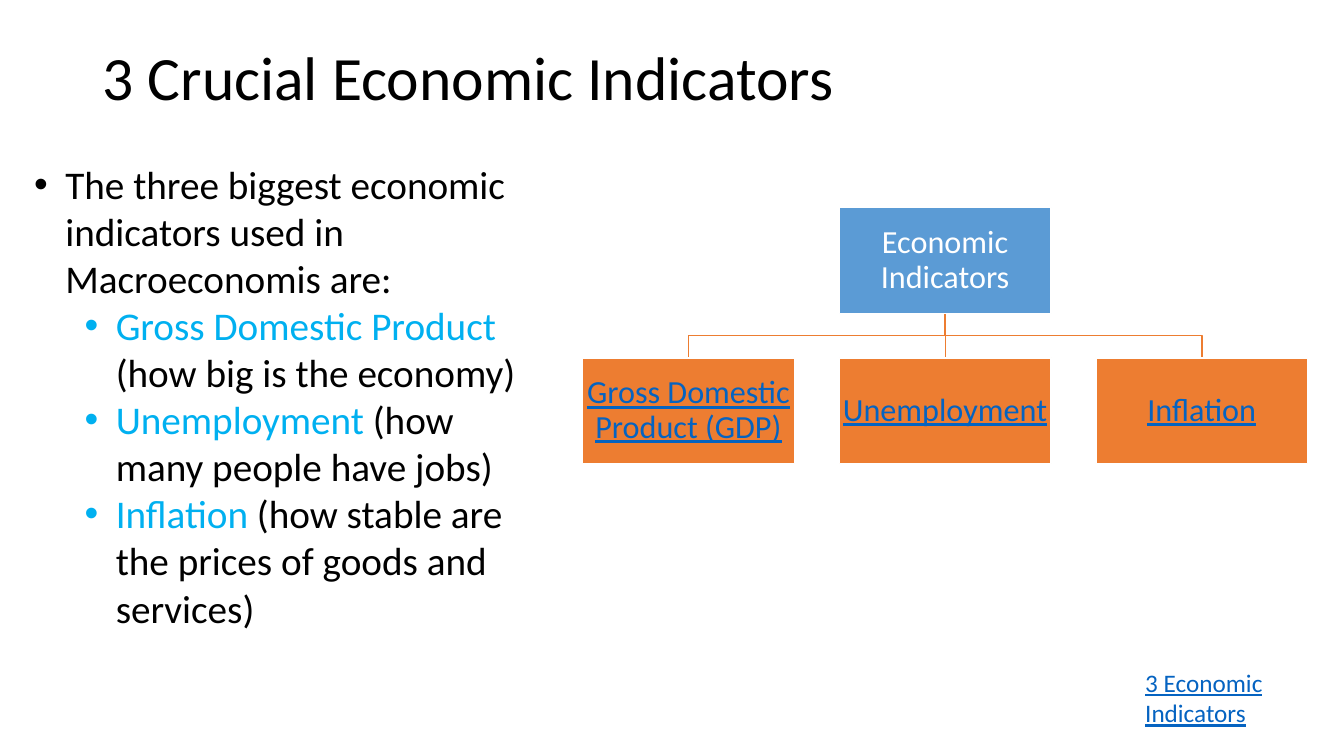
from dataclasses import dataclass

from lxml.etree import SubElement
from pptx import Presentation
from pptx.dml.color import RGBColor as RGB
from pptx.enum.shapes import MSO_CONNECTOR as CONNECTOR, MSO_SHAPE as SHAPE
from pptx.enum.text import MSO_ANCHOR as ANCHOR, PP_ALIGN as ALIGN
from pptx.oxml.ns import qn
from pptx.util import Inches, Pt


@dataclass(frozen=True)
class Theme:
    font: str = "Calibri"
    ink: str = "000000"
    paper: str = "FFFFFF"
    accent: str = "00B0F0"
    root: str = "5B9BD5"
    branch: str = "ED7D31"
    link: str = "0563C1"
    title_size: int = 44
    body_size: int = 28
    node_size: int = 23
    caption_size: int = 18
    line_width: int = 1


THEME = Theme()
WIDTH, HEIGHT = 13.33, 7.5

TITLE_BOX = (0.92, 0.4, 11.5, 0.8)
BULLETS_BOX = (0.24, 1.54, 5.3, 4.81)
CHART_BOX = (5.78, 2.06, 7.19, 2.54)
CAPTION_BOX = (11.26, 6.57, 2.31, 0.71)

INTRO = "The three biggest economic indicators used in Macroeconomis are:"
INDICATORS = [
    ("Gross Domestic Product ", "(how big is the economy)"),
    ("Unemployment", " (how many people have jobs)"),
    ("Inflation ", "(how stable are the prices of goods and services)"),
]
BRANCHES = ["Gross Domestic Product (GDP)", "Unemployment", "Inflation"]


def style(font, size, color, underline=None):
    font.name = THEME.font
    font.size = Pt(size)
    font.color.rgb = RGB.from_string(color)
    font.underline = underline


def add_text(page, box):
    frame = page.shapes.add_textbox(*map(Inches, box)).text_frame
    frame.word_wrap = True
    return frame


def add_title(page, box):
    frame = add_text(page, box)
    frame.vertical_anchor = ANCHOR.MIDDLE
    para = frame.paragraphs[0]
    para.text = "3 Crucial Economic Indicators"
    para.line_spacing = 0.9
    style(para.font, THEME.title_size, THEME.ink)


def set_bullet(para, level, indent, color):
    para.level = level
    props = para._p.get_or_add_pPr()
    props.set("marL", str(Inches(indent)))
    props.set("indent", str(Inches(-0.31)))
    SubElement(SubElement(props, qn("a:buClr")), qn("a:srgbClr"), val=color)
    SubElement(props, qn("a:buFont"), typeface="Arial")
    SubElement(props, qn("a:buChar"), char="•")


def add_bullets(page, box):
    frame = add_text(page, box)
    intro = frame.paragraphs[0]
    intro.text = INTRO
    style(intro.font, THEME.body_size, THEME.ink)
    set_bullet(intro, 0, 0.31, THEME.ink)
    for name, meaning in INDICATORS:
        para = frame.add_paragraph()
        set_bullet(para, 1, 0.81, THEME.accent)
        for text, color in ((name, THEME.accent), (meaning, THEME.ink)):
            span = para.add_run()
            span.text = text
            style(span.font, THEME.body_size, color)


def add_node(page, box, text, fill, color, underline=None):
    node = page.shapes.add_shape(SHAPE.RECTANGLE, *map(Inches, box))
    node.shadow.inherit = False
    node.fill.solid()
    node.fill.fore_color.rgb = RGB.from_string(fill)
    style_line(node.line, THEME.paper)
    frame = node.text_frame
    frame.word_wrap = True
    frame.vertical_anchor = ANCHOR.MIDDLE
    frame.margin_left = frame.margin_right = Inches(0.02)
    frame.margin_top = frame.margin_bottom = Inches(0.02)
    para = frame.paragraphs[0]
    para.text = text
    para.alignment = ALIGN.CENTER
    para.line_spacing = 0.9
    style(para.font, THEME.node_size, color, underline)


def style_line(line, color):
    line.color.rgb = RGB.from_string(color)
    line.width = Pt(THEME.line_width)


def add_link(page, start, end):
    """Joins two points: straight when one is above the other, else with two bends."""
    (x1, y1), (x2, y2) = start, end
    if x1 == x2:
        link = page.shapes.add_connector(
            CONNECTOR.STRAIGHT, *map(Inches, (x1, y1, x2, y2)))
        SubElement(link._element.spPr, qn("a:effectLst"))
    else:
        middle = (y1 + y2) / 2
        bends = [(x1, middle), (x2, middle), end]
        builder = page.shapes.build_freeform(Inches(x1), Inches(y1))
        builder.add_line_segments(
            [(Inches(x), Inches(y)) for x, y in bends], close=False)
        link = builder.convert_to_shape()
        link.shadow.inherit = False
        link.fill.background()
    style_line(link.line, THEME.branch)


def add_hierarchy(page, box):
    left, top, width, height = box
    node_width, node_height = 2.1, 1.05
    pitch = (width - node_width) / (len(BRANCHES) - 1)
    lefts = [left + pitch * column for column in range(len(BRANCHES))]
    root_left = left + (width - node_width) / 2
    branch_top = top + height - node_height
    root_foot = (root_left + node_width / 2, top + node_height)

    for branch_left in reversed(lefts):
        add_link(page, root_foot, (branch_left + node_width / 2, branch_top))
    add_node(page, (root_left, top, node_width, node_height),
             "Economic Indicators", THEME.root, THEME.paper)
    for branch_left, text in zip(lefts, BRANCHES):
        add_node(page, (branch_left, branch_top, node_width, node_height),
                 text, THEME.branch, THEME.link, True)


def add_caption(page, box):
    para = add_text(page, box).paragraphs[0]
    para.text = "3 Economic Indicators"
    style(para.font, THEME.caption_size, THEME.link, True)


def main():
    deck = Presentation()
    deck.slide_width, deck.slide_height = Inches(WIDTH), Inches(HEIGHT)
    page = deck.slides.add_slide(deck.slide_layouts[6])
    add_title(page, TITLE_BOX)
    add_hierarchy(page, CHART_BOX)
    add_caption(page, CAPTION_BOX)
    add_bullets(page, BULLETS_BOX)
    deck.save("out.pptx")


if __name__ == "__main__":
    main()
